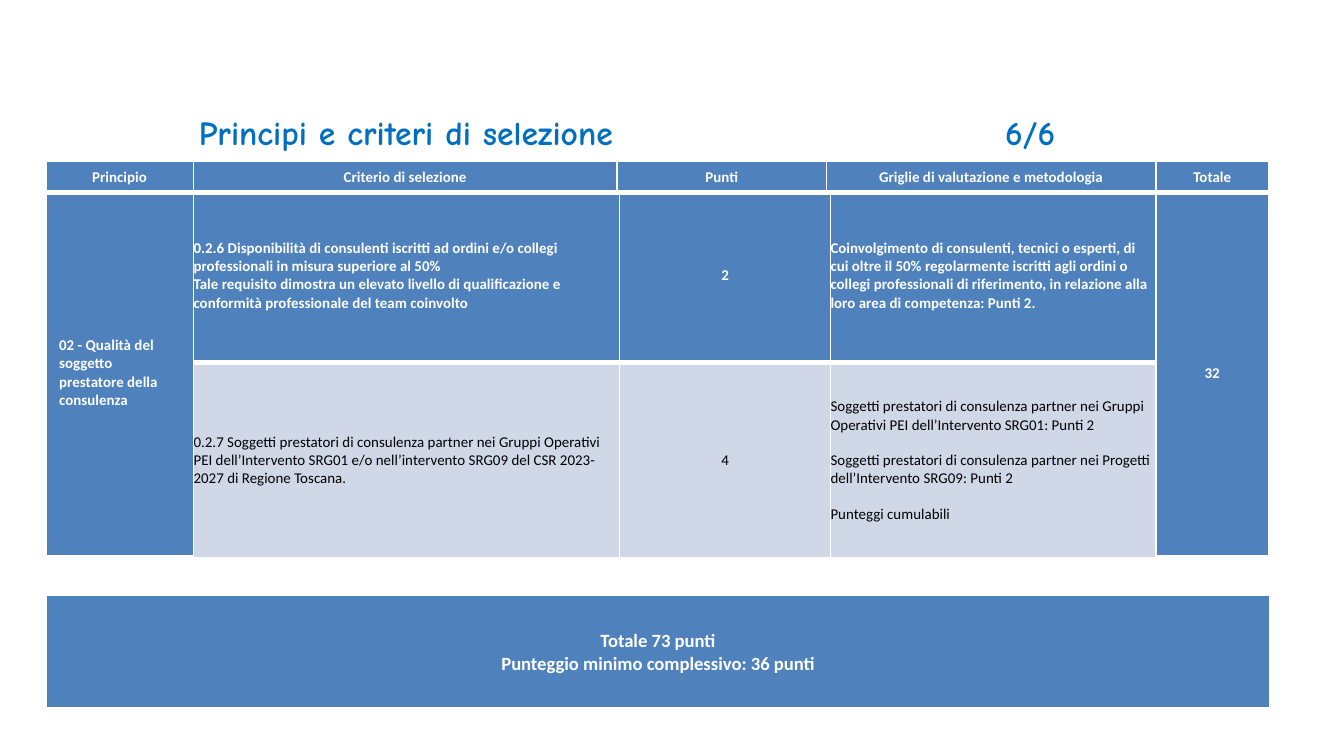
from dataclasses import dataclass

from lxml import etree
from pptx import Presentation
from pptx.dml.color import RGBColor
from pptx.enum.text import MSO_ANCHOR, PP_ALIGN
from pptx.oxml.ns import qn
from pptx.util import Inches, Pt

MIDDLE = MSO_ANCHOR.MIDDLE
LEFT, CENTER = PP_ALIGN.LEFT, PP_ALIGN.CENTER


@dataclass(frozen=True)
class Theme:
    title: RGBColor = RGBColor(0x00, 0x6F, 0xC0)
    blue: RGBColor = RGBColor(0x4F, 0x81, 0xBD)
    pale: RGBColor = RGBColor(0xD0, 0xD8, 0xE8)
    white: RGBColor = RGBColor(0xFF, 0xFF, 0xFF)
    black: RGBColor = RGBColor(0x00, 0x00, 0x00)
    title_font: str = "Comic Neue"
    body_font: str = "Calibri"
    title_size: Pt = Pt(18)
    body_size: Pt = Pt(8)
    total_size: Pt = Pt(10)
    paragraph_gap: Pt = Pt(9)
    thin: Pt = Pt(0.96)
    thick: Pt = Pt(3)


theme = Theme()
presentation = Presentation()
presentation.slide_width = Inches(10)
presentation.slide_height = Inches(10) * 9 // 16
slide = presentation.slides.add_slide(presentation.slide_layouts[6])


def add_grid(top, widths, heights):
    frame = slide.shapes.add_table(
        len(heights), len(widths), Inches(0.34), Inches(top),
        Inches(sum(widths)), Inches(sum(heights)))
    table = frame.table
    table.first_row = False
    table.horz_banding = False
    for column, width in zip(table.columns, widths):
        column.width = Inches(width)
    for row, height in zip(table.rows, heights):
        row.height = Inches(height)
    return table


def fill_cell(cell, lines, alignment=CENTER, side=0, size=theme.body_size,
              pale=False, gap=Pt(0)):
    properties = cell._tc.get_or_add_tcPr()
    for edge in ("lnL", "lnR", "lnT", "lnB"):
        width = theme.thick if edge == "lnB" and not pale else theme.thin
        line = etree.SubElement(properties, qn(f"a:{edge}"), w=str(int(width)))
        solid = etree.SubElement(line, qn("a:solidFill"))
        etree.SubElement(solid, qn("a:srgbClr"), val=str(theme.white))
    cell.fill.solid()
    cell.fill.fore_color.rgb = theme.pale if pale else theme.blue
    cell.vertical_anchor = MIDDLE
    cell.margin_left = cell.margin_right = Inches(side)
    cell.margin_top = cell.margin_bottom = Inches(0.05)
    cell.text = "\n".join(lines)
    for index, paragraph in enumerate(cell.text_frame.paragraphs):
        paragraph.alignment = alignment
        if index and gap:
            paragraph.space_before = gap
        paragraph.font.name = theme.body_font
        paragraph.font.size = size
        paragraph.font.bold = not pale
        paragraph.font.color.rgb = theme.black if pale else theme.white


for left, width, text in (
        (1.47, 3.51, "Principi e criteri di selezione"),
        (7.47, 0.46, "6/6")):
    title = slide.shapes.add_textbox(
        Inches(left), Inches(0.82), Inches(width), Inches(0.31))
    text_frame = title.text_frame
    text_frame.word_wrap = True
    text_frame.margin_left = text_frame.margin_top = Inches(0.01)
    text_frame.margin_right = text_frame.margin_bottom = 0
    paragraph = text_frame.paragraphs[0]
    paragraph.text = text
    paragraph.font.name = theme.title_font
    paragraph.font.size = theme.title_size
    paragraph.font.bold = True
    paragraph.font.color.rgb = theme.title

criteria = add_grid(1.4, (1.1, 3.17, 1.57, 2.42, 0.84), (1.3, 1.45))
for column in (0, 4):
    criteria.cell(0, column).merge(criteria.cell(1, column))
    fill_cell(criteria.cell(1, column), [])
fill_cell(criteria.cell(0, 0),
          ["02 - Qualità del soggetto prestatore della consulenza"], LEFT, 0.1)
fill_cell(criteria.cell(0, 4), ["32"], side=0.1)

criteria_rows = (
    (["0.2.6 Disponibilità di consulenti iscritti ad ordini e/o collegi "
      "professionali in misura superiore al 50%",
      "Tale requisito dimostra un elevato livello di qualificazione e "
      "conformità professionale del team coinvolto"],
     ["2"],
     ["Coinvolgimento di consulenti, tecnici o esperti, di cui oltre il 50% "
      "regolarmente iscritti agli ordini o collegi professionali di "
      "riferimento, in relazione alla loro area di competenza: Punti 2."]),
    (["0.2.7 Soggetti prestatori di consulenza partner nei Gruppi Operativi "
      "PEI dell’Intervento SRG01 e/o nell’intervento SRG09 del CSR 2023-2027 "
      "di Regione Toscana."],
     ["4"],
     ["Soggetti prestatori di consulenza partner nei Gruppi Operativi PEI "
      "dell’Intervento SRG01: Punti 2",
      "Soggetti prestatori di consulenza partner nei Progetti "
      "dell’Intervento SRG09: Punti 2",
      "Punteggi cumulabili"]),
)
for row, contents in enumerate(criteria_rows):
    for column, lines in enumerate(contents, start=1):
        fill_cell(criteria.cell(row, column), lines,
                  CENTER if column == 2 else LEFT, pale=row == 1,
                  gap=theme.paragraph_gap if row == 1 else Pt(0))

header = add_grid(1.2, (1.1, 3.15, 1.56, 2.45, 0.84), (0.23,))
headings = ("Principio", "Criterio di selezione", "Punti",
            "Griglie di valutazione e metodologia", "Totale")
for column, heading in enumerate(headings):
    fill_cell(header.cell(0, column), [heading])

total = add_grid(4.43, (9.11,), (0.85,))
fill_cell(total.cell(0, 0),
          ["Totale 73 punti", "Punteggio minimo complessivo: 36 punti"],
          side=0.06, size=theme.total_size)

presentation.save("out.pptx")
